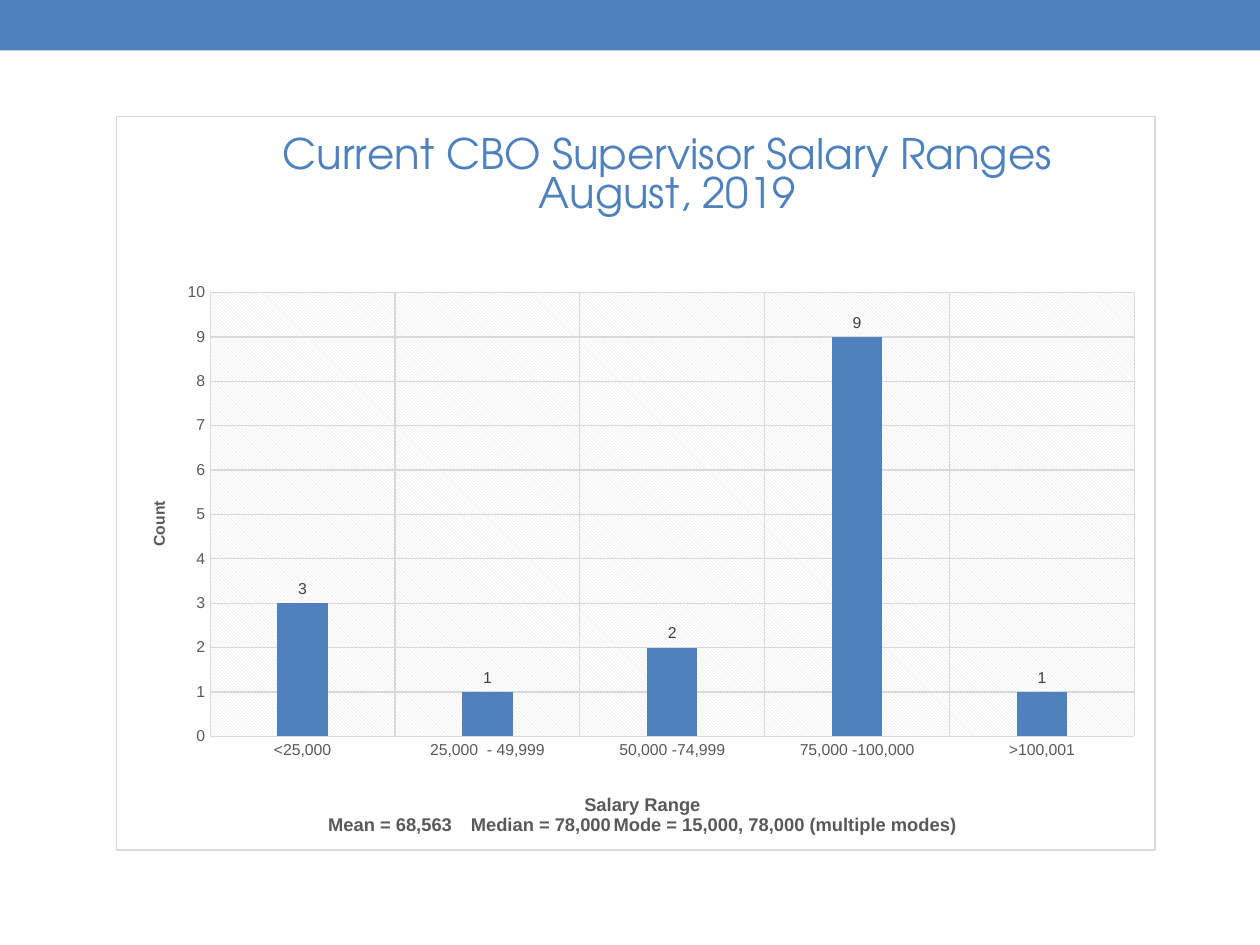
from dataclasses import dataclass

from pptx import Presentation
from pptx.chart.data import CategoryChartData
from pptx.dml.color import RGBColor
from pptx.enum.chart import XL_CHART_TYPE, XL_LABEL_POSITION, XL_TICK_MARK
from pptx.enum.shapes import MSO_SHAPE
from pptx.enum.text import PP_ALIGN
from pptx.oxml import parse_xml
from pptx.oxml.ns import nsdecls, qn
from pptx.util import Cm, Pt

COLUMN = XL_CHART_TYPE.COLUMN_CLUSTERED
OUTSIDE_END = XL_LABEL_POSITION.OUTSIDE_END
NO_TICK = XL_TICK_MARK.NONE
RECT = MSO_SHAPE.RECTANGLE
CENTER = PP_ALIGN.CENTER

COLORS = {
    "blue": "4F81BD",
    "white": "FFFFFF",
    "grid": "D9D9D9",
    "axis": "595959",
    "label": "404040",
    "black": "000000",
}
BODY_FONT = "Arial"
TITLE_FONT = "TeX Gyre Adventor"
SALARY_COUNTS = {
    "<25,000": 3,
    "25,000  - 49,999": 1,
    "50,000 -74,999": 2,
    "75,000 -100,000": 9,
    ">100,001": 1,
}


@dataclass
class ChartText:
    text: str
    x: float
    y: float
    size: float
    color: str = "axis"
    font: str = BODY_FONT
    bold: bool = True
    rotation: int = 0


CHART_TITLE = ChartText("Current CBO Supervisor Salary Ranges\nAugust, 2019",
                        0.156, 0.02, 24, "blue", TITLE_FONT, False)
RANGE_TITLE = ChartText(
    "Salary Range\nMean = 68,563\tMedian = 78,000\tMode = 15,000, 78,000 (multiple modes)",
    0.2, 0.915, 10.5)
COUNT_TITLE = ChartText("Count", 0.028, 0.52, 9, rotation=-90)


def rgb(name: str) -> RGBColor:
    return RGBColor.from_string(COLORS[name])


def set_font(font, size: float, color: str, name: str = BODY_FONT, bold: bool = False) -> None:
    font.size, font.name, font.bold = Pt(size), name, bold
    font.color.rgb = rgb(color)


def set_line(line) -> None:
    line.color.rgb = rgb("grid")
    line.width = Pt(0.75)


def place(element, index: int, target: str = "", **position: float) -> None:
    for old in element.findall(qn("c:layout")):
        element.remove(old)
    inner = f'<c:layoutTarget val="{target}"/>' if target else ""
    modes = "".join(f'<c:{key}Mode val="edge"/>' for key in "xy")
    values = "".join(f'<c:{key} val="{value}"/>' for key, value in position.items())
    element.insert(index, parse_xml(
        f'<c:layout {nsdecls("c")}><c:manualLayout>{inner}{modes}{values}'
        "</c:manualLayout></c:layout>"))


def write_title(title, item: ChartText) -> None:
    tf = title.text_frame
    tf.text = item.text
    for p in tf.paragraphs:
        p.alignment = CENTER
        set_font(p.font, item.size, item.color, item.font, item.bold)
    body = title._element.find(f'.//{qn("a:bodyPr")}')
    body.set("rot", str(item.rotation * 60000))
    body.set("vert", "horz")
    place(title._element, 1, x=item.x, y=item.y)


def style_axis(axis, item: ChartText) -> None:
    axis.major_tick_mark = axis.minor_tick_mark = NO_TICK
    axis.has_major_gridlines = True
    set_line(axis.major_gridlines.format.line)
    set_font(axis.tick_labels.font, 9, "axis")
    write_title(axis.axis_title, item)


def shape_properties(fill: str, line: str) -> object:
    return parse_xml(f'<c:spPr {nsdecls("c", "a")}>{fill}{line}</c:spPr>')


def fill_backgrounds(chart) -> None:
    def solid(name: str) -> str:
        return f'<a:solidFill><a:srgbClr val="{COLORS[name]}"/></a:solidFill>'

    border = f'<a:ln w="{Pt(0.75)}">{solid("grid")}</a:ln>'
    pattern = (f'<a:pattFill prst="ltDnDiag"><a:fgClr><a:srgbClr val="{COLORS["grid"]}"/></a:fgClr>'
               f'<a:bgClr><a:srgbClr val="{COLORS["white"]}"/></a:bgClr></a:pattFill>')
    root = chart._chartSpace.find(qn("c:chart"))
    root.addnext(shape_properties(solid("white"), border))
    plot_area = root.find(qn("c:plotArea"))
    plot_area.append(shape_properties(pattern, "<a:ln><a:noFill/></a:ln>"))
    place(plot_area, 0, "inner", x=0.09, y=0.24, w=0.89, h=0.605)


def add_salary_chart(s) -> None:
    data = CategoryChartData()
    data.categories = list(SALARY_COUNTS)
    data.add_series("Series 1", list(SALARY_COUNTS.values()))
    chart = s.shapes.add_chart(COLUMN, Cm(2.34), Cm(2.34), Cm(20.96), Cm(14.81), data).chart
    set_font(chart.font, 10, "black")
    chart.has_legend = False
    write_title(chart.chart_title, CHART_TITLE)
    style_axis(chart.category_axis, RANGE_TITLE)
    set_line(chart.category_axis.format.line)
    counts = chart.value_axis
    style_axis(counts, COUNT_TITLE)
    counts.format.line.fill.background()
    counts.minimum_scale, counts.maximum_scale, counts.major_unit = 0, 10, 1

    plot = chart.plots[0]
    plot.gap_width, plot.overlap, plot.vary_by_categories = 267, -43, False
    series = plot.series[0]
    series.format.fill.solid()
    series.format.fill.fore_color.rgb = rgb("blue")
    labels = series.data_labels
    labels.show_value, labels.position = True, OUTSIDE_END
    set_font(labels.font, 9, "label")
    fill_backgrounds(chart)


def main() -> None:
    """Build the salary range slide."""
    prs = Presentation()
    prs.slide_width, prs.slide_height = Cm(25.4), Cm(19.05)
    s = prs.slides.add_slide(prs.slide_layouts[6])
    sp = s.shapes.add_shape(RECT, 0, 0, prs.slide_width, Cm(1.02))
    sp.shadow.inherit = False
    sp.fill.solid()
    sp.fill.fore_color.rgb = rgb("blue")
    sp.line.fill.background()
    add_salary_chart(s)
    prs.save("out.pptx")


if __name__ == "__main__":
    main()
